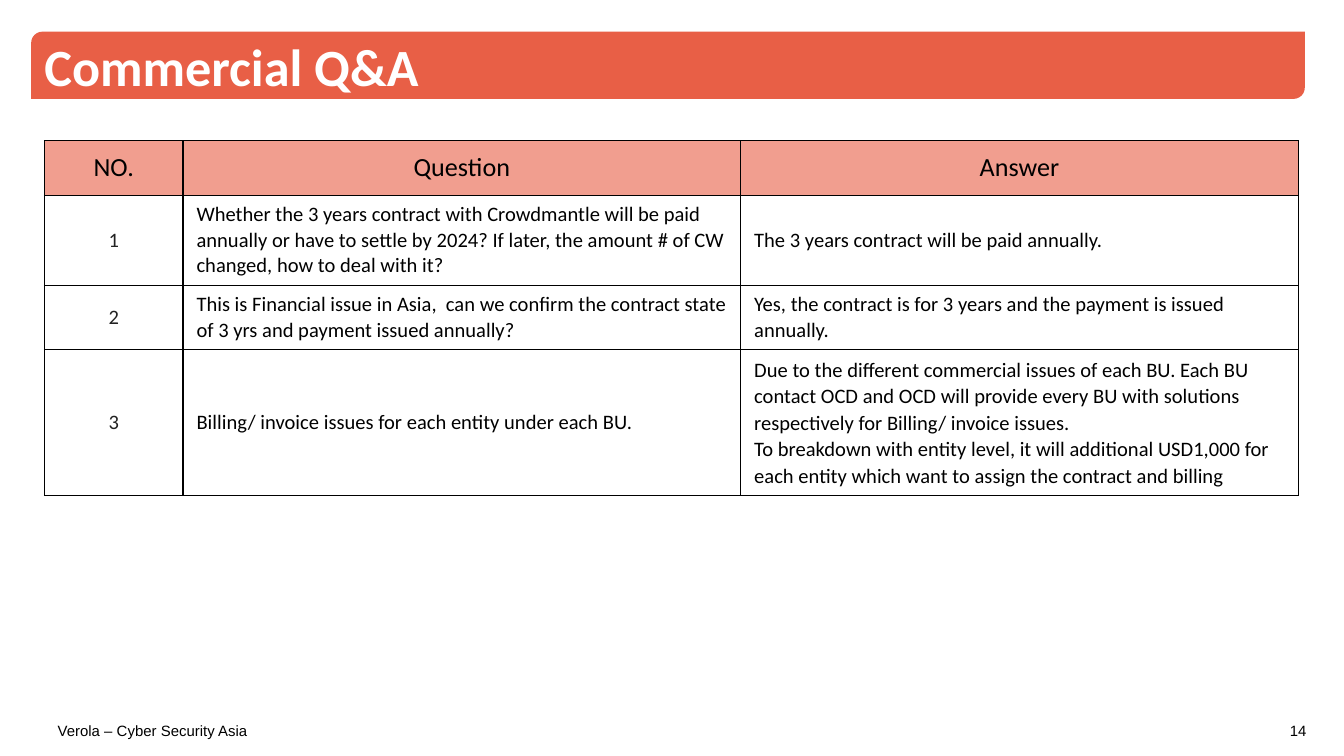
"""Build the Commercial Q&A slide with its question and answer table."""
from lxml.etree import SubElement
from pptx import Presentation
from pptx.dml.color import RGBColor
from pptx.enum.shapes import MSO_SHAPE
from pptx.enum.text import MSO_ANCHOR, PP_ALIGN
from pptx.oxml.ns import qn
from pptx.util import Cm, Pt

COLORS = {"banner": "E85F46", "header": "F19E8F", "number": "222222",
          "ink": "000000", "paper": "FFFFFF"}

TITLE = "Commercial Q&A"
HEADINGS = ("NO.", "Question", "Answer")
ROWS = [
    ("Whether the 3 years contract with Crowdmantle will be paid annually or have to settle "
     "by 2024? If later, the amount # of CW changed, how to deal with it?",
     ["The 3 years contract will be paid annually."]),
    ("This is Financial issue in Asia,  can we confirm the contract state of 3 yrs and "
     "payment issued annually?",
     ["Yes, the contract is for 3 years and the payment is issued annually."]),
    ("Billing/ invoice issues for each entity under each BU.",
     ["Due to the different commercial issues of each BU. Each BU contact OCD and OCD will "
      "provide every BU with solutions respectively for Billing/ invoice issues.",
      "To breakdown with entity level, it will additional USD1,000 for each entity which "
      "want to assign the contract and billing"]),
]
FOOTERS = [
    ("Verola – Cyber Security Asia", 0.84, 4.14, PP_ALIGN.LEFT),
    ("14", 24.08, 0.86, PP_ALIGN.RIGHT),
]
FOOTER_TOP, FOOTER_HEIGHT = 13.5, 0.61
BANNER = (0.59, 0.6, 24.07, 1.27)
TABLE_LEFT, TABLE_TOP = 0.84, 2.66
COLUMN_WIDTHS = (2.62, 10.54, 10.54)
ROW_HEIGHTS = (1.03, 1.7, 1.21, 2.77)

FORMATS = {
    "title": {"name": "Calibri", "size": Pt(28), "bold": True},
    "header": {"name": "Calibri", "size": Pt(14), "bold": False},
    "body": {"name": "Calibri", "size": Pt(11), "bold": False},
    "footer": {"name": "Arial", "size": Pt(8), "bold": False},
}


def color(name):
    return RGBColor.from_string(COLORS[name])


def write(frame, texts, style, ink="ink", align=PP_ALIGN.LEFT):
    for index, text in enumerate(texts):
        para = frame.add_paragraph() if index else frame.paragraphs[0]
        para.alignment = align
        if len(texts) > 1:
            para.line_spacing = 1.05
        span = para.add_run()
        span.text = text
        for name, value in FORMATS[style].items():
            setattr(span.font, name, value)
        span.font.color.rgb = color(ink)


def add_borders(cell):
    properties = cell._tc.get_or_add_tcPr()
    for side in ("a:lnL", "a:lnR", "a:lnT", "a:lnB"):
        line = SubElement(properties, qn(side), w=str(Pt(0.75)))
        fill = SubElement(line, qn("a:solidFill"))
        SubElement(fill, qn("a:srgbClr"), val=COLORS["ink"])


def add_banner(page):
    banner = page.shapes.add_shape(MSO_SHAPE.ROUND_2_DIAG_RECTANGLE, *map(Cm, BANNER))
    banner.shadow.inherit = False
    banner.fill.solid()
    banner.fill.fore_color.rgb = color("banner")
    banner.line.fill.background()
    frame = banner.text_frame
    frame.vertical_anchor = MSO_ANCHOR.MIDDLE
    frame.margin_left = Cm(0.19)
    write(frame, [TITLE], "title", "paper")


def add_table(page):
    rows = [[[heading] for heading in HEADINGS]]
    rows += [[[str(number)], [question], answer]
             for number, (question, answer) in enumerate(ROWS, 1)]
    table = page.shapes.add_table(
        len(rows), len(HEADINGS), Cm(TABLE_LEFT), Cm(TABLE_TOP),
        Cm(sum(COLUMN_WIDTHS)), Cm(sum(ROW_HEIGHTS))).table
    table.first_row = table.horz_banding = False
    for column, width in zip(table.columns, COLUMN_WIDTHS):
        column.width = Cm(width)
    for row, height, contents in zip(table.rows, ROW_HEIGHTS, rows):
        row.height = Cm(height)
        is_header = contents is rows[0]
        for index, (cell, texts) in enumerate(zip(row.cells, contents)):
            add_borders(cell)
            if is_header:
                cell.fill.solid()
                cell.fill.fore_color.rgb = color("header")
            else:
                cell.fill.background()
            cell.vertical_anchor = MSO_ANCHOR.MIDDLE
            centred = is_header or index == 0
            write(cell.text_frame, texts, "header" if is_header else "body",
                  "number" if index == 0 and not is_header else "ink",
                  PP_ALIGN.CENTER if centred else PP_ALIGN.LEFT)


def add_footers(page):
    for text, left, width, align in FOOTERS:
        box = page.shapes.add_textbox(Cm(left), Cm(FOOTER_TOP), Cm(width), Cm(FOOTER_HEIGHT))
        box.text_frame.word_wrap = True
        box.text_frame.vertical_anchor = MSO_ANCHOR.MIDDLE
        write(box.text_frame, [text], "footer", align=align)


def main():
    deck = Presentation()
    deck.slide_width, deck.slide_height = Cm(25.4), Cm(14.29)
    page = deck.slides.add_slide(deck.slide_layouts[6])
    add_banner(page)
    add_table(page)
    add_footers(page)
    deck.save("out.pptx")


if __name__ == "__main__":
    main()
